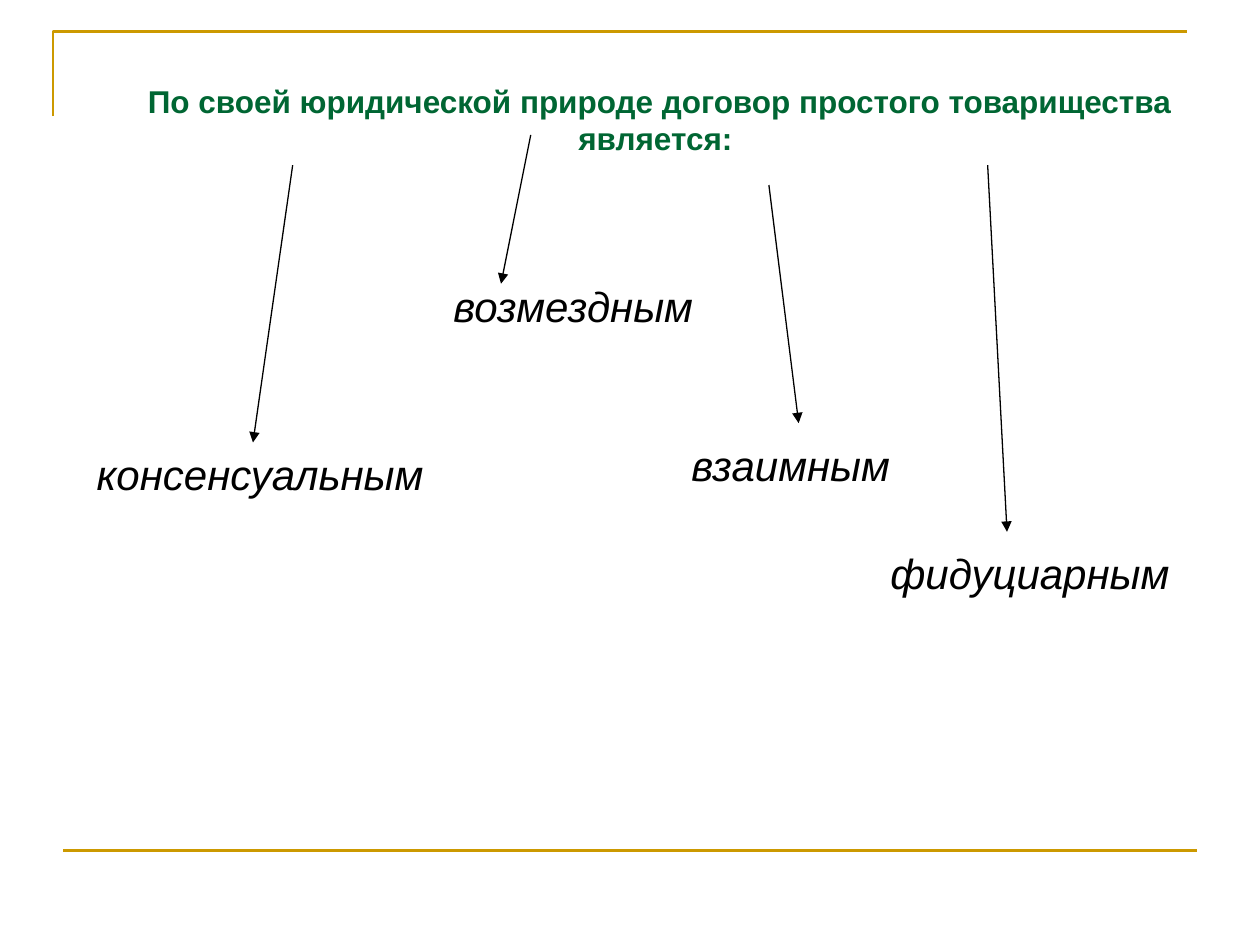
from lxml.etree import SubElement
from pptx import Presentation
from pptx.dml.color import RGBColor
from pptx.enum.shapes import MSO_CONNECTOR
from pptx.enum.text import MSO_AUTO_SIZE, PP_ALIGN
from pptx.oxml.ns import qn
from pptx.util import Cm, Pt

GOLD, GREEN, BLACK = "CC9900", "006633", "000000"

LABELS = [
    ("консенсуальным", (1.7, 8.92, 7.14), (5.9, 3.33, 5.1, 8.92)),
    ("возмездным", (8.89, 5.54, 5.41), (10.7, 2.72, 10.1, 5.72)),
    ("взаимным", (13.69, 8.74, 4.55), (15.5, 3.73, 16.1, 8.53)),
    ("фидуциарным", (17.7, 10.92, 6.15), (19.91, 3.33, 20.3, 10.72)),
]


def color(code):
    """Turn a hex string into a colour."""
    return RGBColor.from_string(code)


def stroke(line, code, width):
    """Set the colour and width of a line."""
    line.color.rgb = color(code)
    line.width = Pt(width)


def rule(slide, ends, code, width, arrow=False):
    """Draw a straight line, with an arrowhead if asked."""
    item = slide.shapes.add_connector(MSO_CONNECTOR.STRAIGHT, *map(Cm, ends))
    stroke(item.line, code, width)
    if arrow:
        SubElement(item.line._get_or_add_ln(), qn("a:tailEnd"), type="triangle")
    SubElement(item._element.spPr, qn("a:effectLst"))


def corner(slide, points):
    """Draw the open gold corner along the given points."""
    first, *rest = [(Cm(x), Cm(y)) for x, y in points]
    pen = slide.shapes.build_freeform(*first)
    pen.add_line_segments(rest, close=False)
    item = pen.convert_to_shape()
    item.shadow.inherit = False
    item.fill.background()
    stroke(item.line, GOLD, 1.5)


def words(slide, text, box, code, wrap, align, style):
    """Add a text box whose font takes the values in style."""
    frame = slide.shapes.add_textbox(*map(Cm, box)).text_frame
    frame.word_wrap = wrap
    frame.auto_size = MSO_AUTO_SIZE.SHAPE_TO_FIT_TEXT
    part = frame.paragraphs[0]
    part.alignment = align
    run = part.add_run()
    run.text = text
    run.font.color.rgb = color(code)
    for name, value in {"name": "Arial", **style}.items():
        setattr(run.font, name, value)


def main():
    """Build the slide and save it."""
    deck = Presentation()
    deck.slide_width, deck.slide_height = Cm(25.4), Cm(19.05)
    slide = deck.slides.add_slide(deck.slide_layouts[6])
    corner(slide, [(1.07, 2.34), (1.07, 0.64), (23.93, 0.64)])
    rule(slide, (1.27, 17.15, 24.13, 17.15), GOLD, 1.5)
    title = "По своей юридической природе договор простого товарищества является: "
    words(slide, title, (1.5, 1.52, 23.6, 2.54), GREEN, True,
          PP_ALIGN.CENTER, {"size": Pt(18), "bold": True})
    for text, (left, top, width), ends in LABELS:
        words(slide, text, (left, top, width, 1.27), BLACK, False,
              PP_ALIGN.LEFT, {"size": Pt(24), "italic": True})
        rule(slide, ends, BLACK, 0.75, arrow=True)
    deck.save("out.pptx")


if __name__ == "__main__":
    main()
